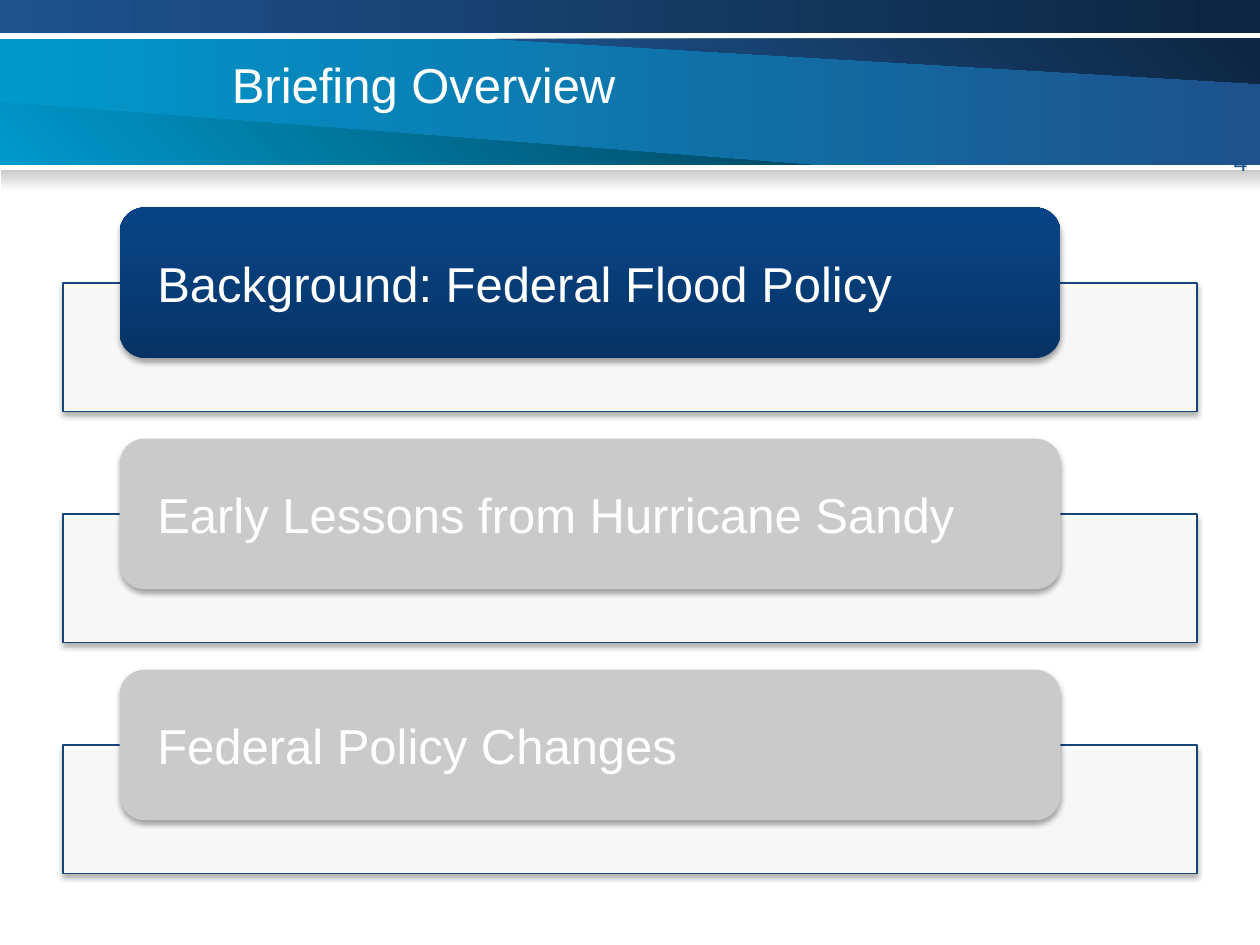
import pptx
import pptx.dml.color
import pptx.enum.shapes
import pptx.enum.text
import pptx.oxml
import pptx.oxml.ns
import pptx.util

Pt = pptx.util.Pt
PRESET = pptx.enum.shapes.MSO_SHAPE
ALIGN = pptx.enum.text.PP_ALIGN
ANCHOR = pptx.enum.text.MSO_ANCHOR
NS = pptx.oxml.ns.nsdecls("a")
FONT = "Arial"
COLORS = {
    "white": "FFFFFF",
    "sky": "0099CC",
    "teal": "00465E",
    "blue": "1D528D",
    "navy": "0D2641",
    "gray": "CACACA",
    "outline": "174578",
    "active_low": "063364",
    "active_mid": "084282",
    "active_high": "064285",
    "shadow": "000000",
}
TOPICS = [
    "Background: Federal Flood Policy",
    "Early Lessons from Hurricane Sandy",
    "Federal Policy Changes",
]
ACTIVE_TOPIC = 0


def color(name):
    """Return the named colour."""
    return pptx.dml.color.RGBColor.from_string(COLORS[name])


def paint_gradient(shape, stops, angle):
    """Fill a shape with (percent, colour name) stops at a clockwise angle."""
    shape.fill.background()
    no_fill = shape.element.spPr.find(pptx.oxml.ns.qn("a:noFill"))
    stop_xml = "".join(
        f'<a:gs pos="{pos * 1000}"><a:srgbClr val="{COLORS[name]}"/></a:gs>'
        for pos, name in stops
    )
    gradient = pptx.oxml.parse_xml(
        f'<a:gradFill {NS} rotWithShape="1"><a:gsLst>{stop_xml}</a:gsLst>'
        f'<a:lin ang="{angle * 60000}" scaled="0"/></a:gradFill>'
    )
    shape.element.spPr.replace(no_fill, gradient)


def cast_shadow(shape):
    """Give a shape a soft shadow straight below it."""
    shape.shadow.inherit = False
    effects = shape.element.spPr.find(pptx.oxml.ns.qn("a:effectLst"))
    effects.append(pptx.oxml.parse_xml(
        f'<a:outerShdw {NS} blurRad="{Pt(3.1)}" dist="{Pt(1.8)}" dir="5400000" '
        f'rotWithShape="0"><a:srgbClr val="{COLORS["shadow"]}">'
        '<a:alpha val="35000"/></a:srgbClr></a:outerShdw>'
    ))


def add_preset(slide, preset, left, top, width, height):
    """Add a preset shape without line or shadow."""
    shape = slide.shapes.add_shape(preset, Pt(left), Pt(top), Pt(width), Pt(height))
    shape.shadow.inherit = False
    shape.line.fill.background()
    return shape


def add_strip(slide, left, top, width, height, start, end, angle):
    """Add a rectangle shaded between two colours."""
    strip = add_preset(slide, PRESET.RECTANGLE, left, top, width, height)
    paint_gradient(strip, [(0, start), (100, end)], angle)


def add_wedge(slide, points, start, end):
    """Add a shaded wedge through the given points."""
    builder = slide.shapes.build_freeform(Pt(points[0][0]), Pt(points[0][1]))
    builder.add_line_segments([(Pt(x), Pt(y)) for x, y in points[1:]], close=True)
    wedge = builder.convert_to_shape()
    wedge.shadow.inherit = False
    wedge.line.fill.background()
    paint_gradient(wedge, [(0, start), (100, end)], 315)


def write(shape, text, size, color_name, align=ALIGN.LEFT, anchor=ANCHOR.MIDDLE):
    """Write one run of text into a shape."""
    frame = shape.text_frame
    frame.word_wrap = True
    frame.vertical_anchor = anchor
    paragraph = frame.paragraphs[0]
    paragraph.alignment = align
    run = paragraph.add_run()
    run.text = text
    run.font.name = FONT
    run.font.size = Pt(size)
    run.font.color.rgb = color(color_name)


def add_banner(slide, left, top, width, height):
    """Draw the banner with its two wedges, top bar and lower shade."""
    right, bottom = left + width, top + height
    add_strip(slide, left, top, width, height, "sky", "blue", 0)
    add_wedge(slide, [(left + 283, top), (right, top), (right, top + 25.5)],
              "blue", "navy")
    add_wedge(slide, [(left, bottom - 36), (left + 463, bottom), (left, bottom)],
              "sky", "teal")
    add_strip(slide, left, 0, width, 18.7, "blue", "navy", 0)
    add_strip(slide, left + 0.7, bottom + 2.9, width - 0.7, 12.2, "gray", "white", 90)


def add_heading(slide, left, top, width, height):
    """Place the title over the banner."""
    title = slide.shapes.title
    title.left, title.top = Pt(left), Pt(top)
    title.width, title.height = Pt(width), Pt(height)
    write(title, "Briefing Overview", 28, "white")
    slide.shapes.element.append(title.element)


def add_page_number(slide, left, top, width, height):
    """Place the page number at the right edge."""
    number = slide.shapes.add_textbox(Pt(left), Pt(top), Pt(width), Pt(height))
    write(number, "4", 14, "blue", ALIGN.RIGHT, ANCHOR.TOP)


def add_topic(slide, text, active, left, top, width, height):
    """Draw one topic card overlapping its outlined frame."""
    frame_height = 73.4
    frame = add_preset(slide, PRESET.RECTANGLE, left, top + height - frame_height,
                       width, frame_height)
    frame.fill.solid()
    frame.fill.fore_color.rgb = color("white")
    white = frame.element.spPr.find(".//" + pptx.oxml.ns.qn("a:srgbClr"))
    white.append(pptx.oxml.parse_xml(f'<a:alpha {NS} val="90000"/>'))
    frame.line.color.rgb = color("outline")
    frame.line.width = Pt(0.75)
    cast_shadow(frame)

    card = add_preset(slide, PRESET.ROUNDED_RECTANGLE, left + 32.4, top, 537.6, 86)
    if active:
        paint_gradient(card, [(0, "active_low"), (80, "active_mid"),
                              (100, "active_high")], 270)
    else:
        card.fill.solid()
        card.fill.fore_color.rgb = color("gray")
    cast_shadow(card)
    card.text_frame.margin_left = card.text_frame.margin_right = Pt(17.3)
    card.text_frame.margin_top = card.text_frame.margin_bottom = Pt(0)
    write(card, text, 28, "white")


def add_topics(slide, left, top, width, height):
    """Stack the topics with equal gaps down the box."""
    gap = 15.6
    topic_height = (height - gap * (len(TOPICS) - 1)) / len(TOPICS)
    for index, text in enumerate(TOPICS):
        add_topic(slide, text, index == ACTIVE_TOPIC, left,
                  top + index * (topic_height + gap), width, topic_height)


def main():
    """Build and save the overview slide."""
    deck = pptx.Presentation()
    deck.slide_width, deck.slide_height = Pt(720), Pt(540)
    slide = deck.slides.add_slide(deck.slide_layouts[5])
    add_banner(slide, 0, 22.3, 720, 72)
    add_heading(slide, 125.3, 18, 594.7, 60)
    add_page_number(slide, 684, 80.6, 36, 34.6)
    add_topics(slide, 36, 118.6, 648, 380.6)
    deck.save("out.pptx")


if __name__ == "__main__":
    main()
